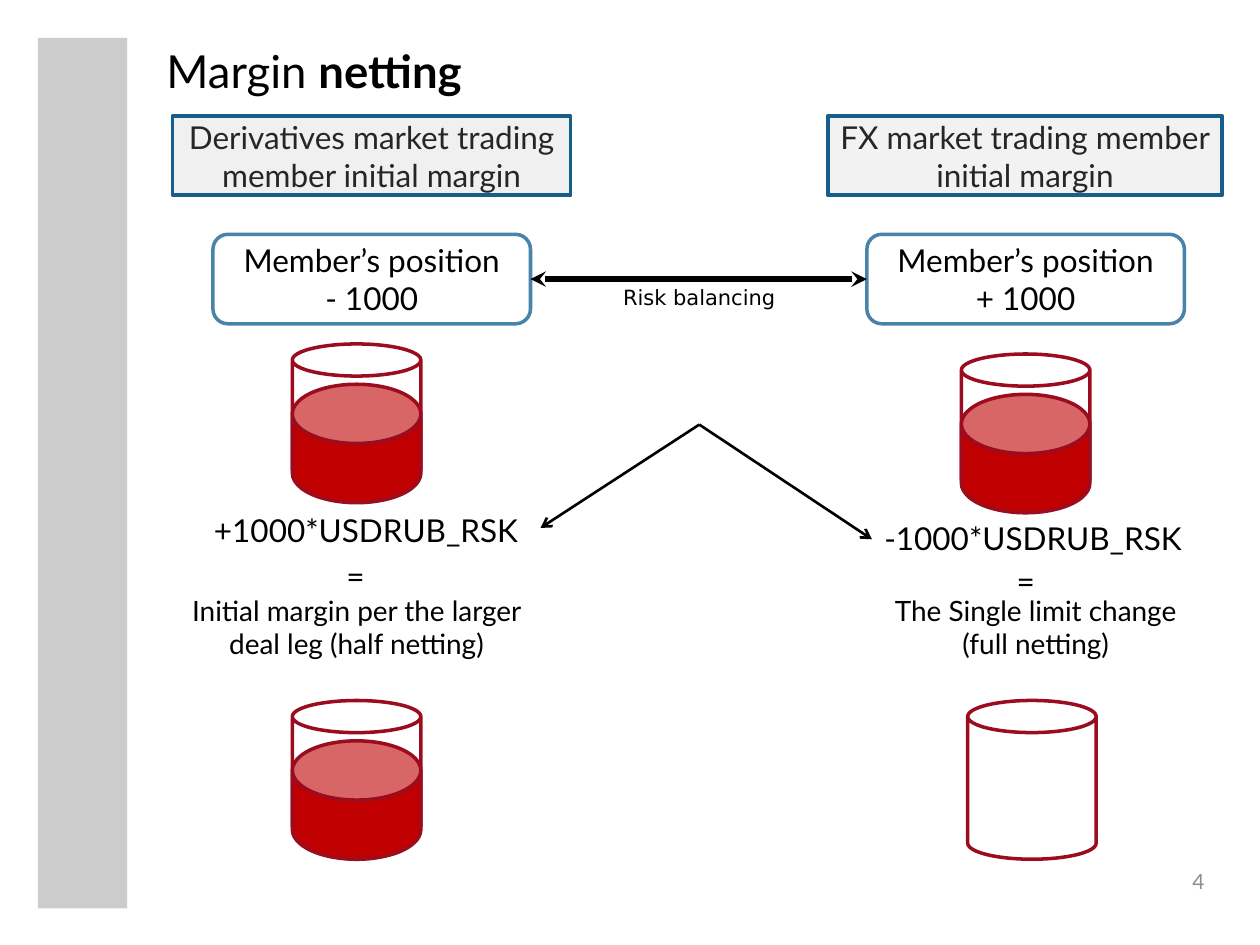
from lxml import etree
from pptx import Presentation
from pptx.dml.color import RGBColor
from pptx.enum.shapes import MSO_CONNECTOR, MSO_SHAPE
from pptx.enum.text import MSO_ANCHOR, PP_ALIGN
from pptx.oxml.ns import qn
from pptx.util import Inches, Pt

RECT, ROUNDED, CAN = MSO_SHAPE.RECTANGLE, MSO_SHAPE.ROUNDED_RECTANGLE, MSO_SHAPE.CAN
STRAIGHT = MSO_CONNECTOR.STRAIGHT
TOP, MIDDLE = MSO_ANCHOR.TOP, MSO_ANCHOR.MIDDLE
LEFT, CENTER, RIGHT = PP_ALIGN.LEFT, PP_ALIGN.CENTER, PP_ALIGN.RIGHT

COLORS = {
    "black": "000000", "heading": "262626", "number": "8C8C8C",
    "band": "CCCCCC", "heading_line": "175E8D", "position_line": "4983A9",
    "can_line": "9B0D1E", "liquid": "C00000",
    "derivatives": "D9D9D9", "fx": "F2F2F2",
}

# Content: boxes are (left, top, width, height) in inches
TITLE = [("Margin ", False), ("netting", True)]
HEADINGS = [
    ("Derivatives market trading member initial margin", (1.37, 0.92, 3.16, 0.63), "derivatives", 37),
    ("FX market trading member initial margin", (6.57, 0.92, 3.13, 0.63), "fx", 100),
]
POSITIONS = [
    (["Member’s position", "- 1000"], 1.69),
    (["Member’s position", "+ 1000"], 6.88),
]
FORMULAS = [
    ("+1000*USDRUB_RSK", (1.6, 4.01, 2.73, 0.4)),
    ("-1000*USDRUB_RSK", (6.92, 4.07, 2.67, 0.4)),
    ("=", (2.65, 4.37, 0.35, 0.4)),
    ("=", (7.97, 4.41, 0.35, 0.4)),
]
RESULTS = [
    (["Initial margin per the larger deal leg (half netting)"], (1.34, 4.66, 2.98, 0.64)),
    (["The Single limit change", "(full netting)"], (6.6, 4.66, 3.24, 0.8)),
]
FILLED_CANS = [(2.32, 2.73), (7.63, 2.81), (2.32, 5.56)]
EMPTY_CAN = (7.68, 5.56, 1.02, 1.26)
FORK = (5.55, 3.37)
FORK_ENDS = [(4.29, 4.19), (6.92, 4.28)]


def inches(values):
    return [Inches(v) for v in values]


def rgb(name):
    return RGBColor.from_string(COLORS[name])


def add_run(paragraph, text, size, color="black", font="Lato", bold=False):
    run = paragraph.add_run()
    run.text = text
    run.font.size, run.font.name, run.font.bold = Pt(size), font, bold
    run.font.color.rgb = rgb(color)


def write(frame, lines, size, color="black", font="Lato", align=CENTER, anchor=TOP, wrap=True):
    frame.word_wrap, frame.vertical_anchor = wrap, anchor
    for i, line in enumerate(lines):
        paragraph = frame.add_paragraph() if i else frame.paragraphs[0]
        paragraph.alignment = align
        add_run(paragraph, line, size, color, font)


def add_text(box, lines, size, **style):
    frame = slide.shapes.add_textbox(*inches(box)).text_frame
    write(frame, lines, size, **style)
    return frame


def add_outline(shapes, kind, box, line=None, fill=None, alpha=100):
    shape = shapes.add_shape(kind, *inches(box))
    shape.shadow.inherit = False
    if fill:
        shape.fill.solid()
        shape.fill.fore_color.rgb = rgb(fill)
        if alpha < 100:
            color = shape.fill._xPr.find(qn("a:solidFill"))[0]
            etree.SubElement(color, qn("a:alpha")).set("val", str(alpha * 1000))
    else:
        shape.fill.background()
    if line:
        shape.line.color.rgb, shape.line.width = rgb(line), Pt(2)
    else:
        shape.line.fill.background()
    return shape


def add_arrow(start, end, width, **heads):
    arrow = slide.shapes.add_connector(STRAIGHT, *inches(start + end))
    arrow.line.color.rgb, arrow.line.width = rgb("black"), Pt(width)
    line = arrow.line._get_or_add_ln()
    for side, style in heads.items():
        etree.SubElement(line, qn(f"a:{side}")).set("type", style)
    etree.SubElement(arrow._element.spPr, qn("a:effectLst"))
    return arrow


prs = Presentation()
prs.slide_width, prs.slide_height = Inches(10), Inches(7.5)
slide = prs.slides.add_slide(prs.slide_layouts[5])

# Side band, title and page number
add_outline(slide.shapes, RECT, (0.3, 0.3, 0.71, 6.91), fill="band")
title = slide.shapes.title
title.left, title.top, title.width, title.height = inches((1.22, 0.29, 8.11, 1.23))
title.text_frame.vertical_anchor = TOP
title.text_frame.paragraphs[0].alignment = LEFT
for text, bold in TITLE:
    add_run(title.text_frame.paragraphs[0], text, 26, bold=bold)
number = add_text((9.17, 6.77, 0.39, 0.39), ["4"], 12, color="number", align=RIGHT, anchor=MIDDLE)
number.margin_right = number.margin_bottom = 0

# Market headings
for text, box, fill, alpha in HEADINGS:
    heading = add_outline(slide.shapes, RECT, box, "heading_line", fill, alpha)
    write(heading.text_frame, [text], 18, color="heading", anchor=MIDDLE)

# Member positions, balanced by a double arrow
positions = []
for lines, left in POSITIONS:
    position = add_outline(slide.shapes, ROUNDED, (left, 1.86, 2.52, 0.71), "position_line")
    write(position.text_frame, lines, 18, anchor=MIDDLE)
    positions.append(position)
balance = add_arrow((4.21, 2.21), (6.88, 2.21), 3, headEnd="stealth", tailEnd="stealth")
balance.begin_connect(positions[0], 3)
balance.end_connect(positions[1], 1)
add_text((4.33, 2.21, 2.44, 0.32), ["Risk balancing"], 12, font="DejaVu Sans")

# Margin cans: an open can with the liquid inside it
for left, top in FILLED_CANS:
    can = slide.shapes.add_group_shape().shapes
    add_outline(can, CAN, (left, top, 1.02, 1.12), "can_line")
    liquid = add_outline(can, CAN, (left, top + 0.32, 1.02, 0.94), "can_line", "liquid")
    liquid.adjustments[0] = 0.5
add_outline(slide.shapes, CAN, EMPTY_CAN, "can_line")

# Formulas and results
for text, box in FORMULAS:
    add_text(box, [text], 18, align=LEFT, wrap=False)
for lines, box in RESULTS:
    add_text(box, lines, 16)

# Fork towards both formulas
for end in FORK_ENDS:
    add_arrow(FORK, end, 1.5, tailEnd="arrow")

prs.save("out.pptx")
